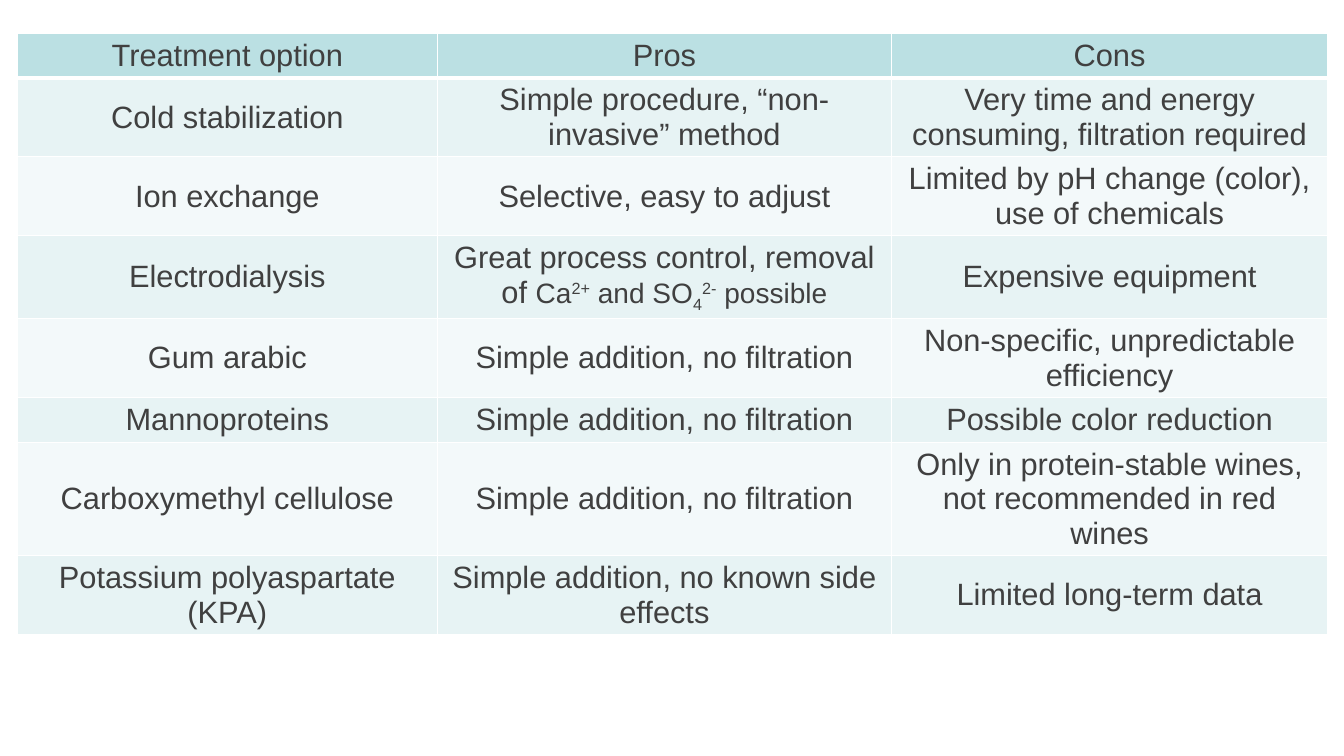
from pptx import Presentation
from pptx.dml.color import RGBColor
from pptx.enum.text import MSO_ANCHOR, PP_ALIGN
from pptx.oxml.ns import qn
from pptx.util import Inches, Pt
from lxml.etree import SubElement

# Content: a cell is a string or a list of (text, size, baseline in %) runs
ADDITION = "Simple addition, no filtration"
ION_REMOVAL = [
    ("Great process control, removal of ", 22, 0),
    ("Ca", 20, 0),
    ("2+", 20, 30),
    (" and SO", 20, 0),
    ("4", 20, -25),
    ("2-", 20, 30),
    (" possible", 20, 0),
]
ROWS = [
    ("Treatment option", "Pros", "Cons"),
    ("Cold stabilization", "Simple procedure, “non-invasive” method",
     "Very time and energy consuming, filtration required"),
    ("Ion exchange", "Selective, easy to adjust",
     "Limited by pH change (color), use of chemicals"),
    ("Electrodialysis", ION_REMOVAL, "Expensive equipment"),
    ("Gum arabic", ADDITION, "Non-specific, unpredictable efficiency"),
    ("Mannoproteins", ADDITION, "Possible color reduction"),
    ("Carboxymethyl cellulose", ADDITION,
     "Only in protein-stable wines, not recommended in red wines"),
    ("Potassium polyaspartate (KPA)", "Simple addition, no known side effects",
     "Limited long-term data"),
]
COLORS = {"header": "BBE0E3", "odd": "E7F3F4", "even": "F3F9FA",
          "border": "FFFFFF", "text": "404040"}
COL_WIDTHS = (4.17, 4.5, 4.33)
ROW_HEIGHT = 0.41


def add_text(p, text, size=22, baseline=0):
    r = p.add_run()
    r.text = text
    r.font.name = "Arial"
    r.font.size = Pt(size)
    r.font.color.rgb = RGBColor.from_string(COLORS["text"])
    if baseline:
        r.font._element.set("baseline", str(baseline * 1000))


def set_borders(cell, bottom=1):
    tcPr = cell._tc.get_or_add_tcPr()
    for side, width in (("L", 1), ("R", 1), ("T", 1), ("B", bottom)):
        ln = SubElement(tcPr, qn(f"a:ln{side}"), w=str(Pt(width)))
        fill = SubElement(ln, qn("a:solidFill"))
        SubElement(fill, qn("a:srgbClr"), val=COLORS["border"])


prs = Presentation()
prs.slide_width, prs.slide_height = Inches(13.33), Inches(7.5)
slide = prs.slides.add_slide(prs.slide_layouts[6])

# Table grid: rows grow to fit their text
table = slide.shapes.add_table(
    len(ROWS), len(COL_WIDTHS), Inches(0.17), Inches(0.33),
    Inches(sum(COL_WIDTHS)), Inches(ROW_HEIGHT * len(ROWS))).table
for column, width in zip(table.columns, COL_WIDTHS):
    column.width = Inches(width)

# Cells: header colour first, then alternating bands
for i, row in enumerate(ROWS):
    table.rows[i].height = Inches(ROW_HEIGHT)
    band = "header" if i == 0 else "odd" if i % 2 else "even"
    for j, content in enumerate(row):
        cell = table.cell(i, j)
        set_borders(cell, bottom=3 if i == 0 else 1)
        cell.fill.solid()
        cell.fill.fore_color.rgb = RGBColor.from_string(COLORS[band])
        cell.vertical_anchor = MSO_ANCHOR.MIDDLE
        p = cell.text_frame.paragraphs[0]
        p.alignment = PP_ALIGN.CENTER
        if isinstance(content, str):
            add_text(p, content)
        else:
            for text, size, baseline in content:
                add_text(p, text, size=size, baseline=baseline)

prs.save("out.pptx")
